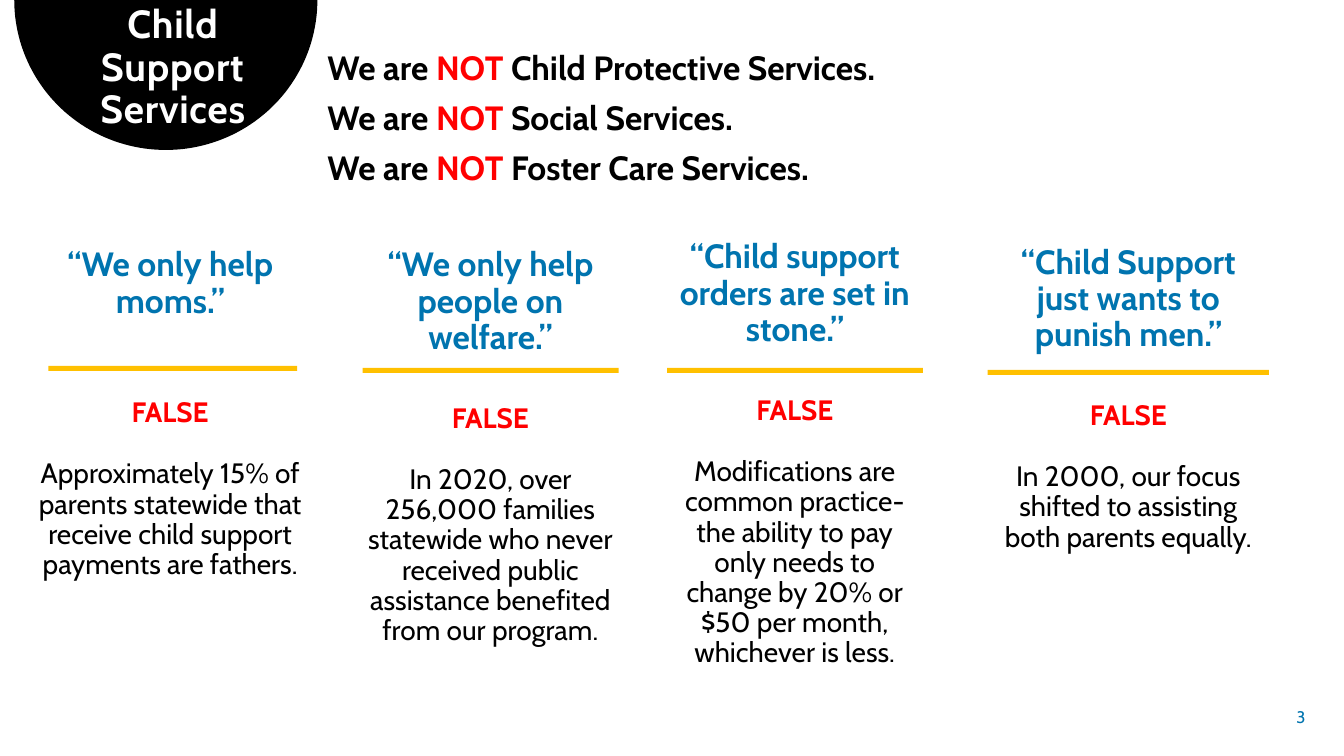
import math

import pptx
import pptx.util
import pptx.dml.color
import pptx.enum.shapes
import pptx.enum.text

Cm, Pt = pptx.util.Cm, pptx.util.Pt
ALIGN = pptx.enum.text.PP_ALIGN
MIDDLE = pptx.enum.text.MSO_ANCHOR.MIDDLE
COLORS = {"black": "000000", "white": "FFFFFF", "blue": "0074AF",
          "red": "FF0000", "gold": "FFC000"}

prs = pptx.Presentation()
prs.slide_width, prs.slide_height = Cm(33.87), Cm(19.05)
s = prs.slides.add_slide(prs.slide_layouts[6])


def add_text(left, top, width, height, paragraphs, anchor=None):
    """Each paragraph: text, size, color, bold, alignment, line spacing, before, after."""
    tf = s.shapes.add_textbox(Cm(left), Cm(top), Cm(width), Cm(height)).text_frame
    tf.word_wrap = True
    if anchor is not None:
        tf.vertical_anchor = anchor
    for i, (text, size, color, bold, align, spacing, before, after) in enumerate(paragraphs):
        p = tf.paragraphs[0] if i == 0 else tf.add_paragraph()
        p.text = text
        p.alignment, p.line_spacing = align, spacing
        p.space_before, p.space_after = Pt(before), Pt(after)
        p.font.name, p.font.size, p.font.bold = "Cabin", Pt(size), bold
        p.font.color.rgb = pptx.dml.color.RGBColor.from_string(COLORS[color])
    return tf


def paint(sp, color):
    sp.shadow.inherit = False
    sp.fill.solid()
    sp.fill.fore_color.rgb = pptx.dml.color.RGBColor.from_string(COLORS[color])
    sp.line.fill.background()


# Half disc hanging from the top edge
center_x, radius_x, radius_y = 4.18, 3.82, 3.78
arc = [(Cm(center_x + radius_x * math.cos(math.radians(a))),
        Cm(radius_y * math.sin(math.radians(a)))) for a in range(0, 181, 2)]
builder = s.shapes.build_freeform(*arc[0])
builder.add_line_segments(arc[1:], close=True)
paint(builder.convert_to_shape(), "black")

# Title
tf = add_text(1.17, 0, 6.38, 3.48,
              [("Child Support Services", 28, "white", True, ALIGN.CENTER, 0.9, 0, 0)])
tf.paragraphs[0].runs[0]._r.get_or_add_rPr().set("spc", "60")

# What the agency is not
services = ["Child Protective", "Social", "Foster Care"]
tf = add_text(8, 1.17, 25.22, 3.73,
              [("We are ", 24, "black", True, ALIGN.LEFT, 0.9, 10, 0)] * len(services))
for p, service in zip(tf.paragraphs, services):
    r = p.add_run()
    r.text = "NOT"
    r.font.color.rgb = pptx.dml.color.RGBColor.from_string(COLORS["red"])
    p.add_run().text = f" {service} Services."

# Myth columns: quote, fact, gap above FALSE, text box, rule (left, top, width)
myths = [
    ("“We only help moms.”",
     "Approximately 15% of parents statewide that receive child support "
     "payments are fathers.",
     32, (0.71, 6.12, 7.16, 9.47), (1.22, 9.22, 6.27)),
    ("“We only help people on welfare.”",
     "In 2020, over 256,000 families statewide who never received public "
     "assistance benefited from our program.",
     10, (8.64, 6.12, 7.44, 9.63), (9.14, 9.27, 6.45)),
    ("“Child support orders are set in stone.”",
     "Modifications are common practice- the ability to pay only needs to "
     "change by 20% or $50 per month, whichever is less.",
     10, (16.74, 5.92, 6.58, 11.5), (16.81, 9.27, 6.45)),
    ("“Child Support just wants to punish men.”",
     "In 2000, our focus shifted to assisting both parents equally.",
     10, (24.89, 6.05, 7.09, 8.1), (24.89, 9.32, 7.09)),
]
for quote, fact, gap, box, (left, top, width) in myths:
    add_text(*box, [
        (quote, 24, "blue", True, ALIGN.CENTER, 0.9, 10, 24),
        ("FALSE", 20, "red", True, ALIGN.CENTER, 0.9, gap, 12),
        (fact, 20, "black", False, ALIGN.CENTER, 0.9, 10, 12),
    ])
    sp = s.shapes.add_shape(pptx.enum.shapes.MSO_SHAPE.RECTANGLE,
                            Cm(left), Cm(top), Cm(width), Cm(0.13))
    paint(sp, "gold")

# Slide number
add_text(31.75, 17.55, 1.4, 1.02,
         [("3", 12, "blue", False, ALIGN.RIGHT, 1.0, 0, 0)], MIDDLE)

prs.save("out.pptx")
